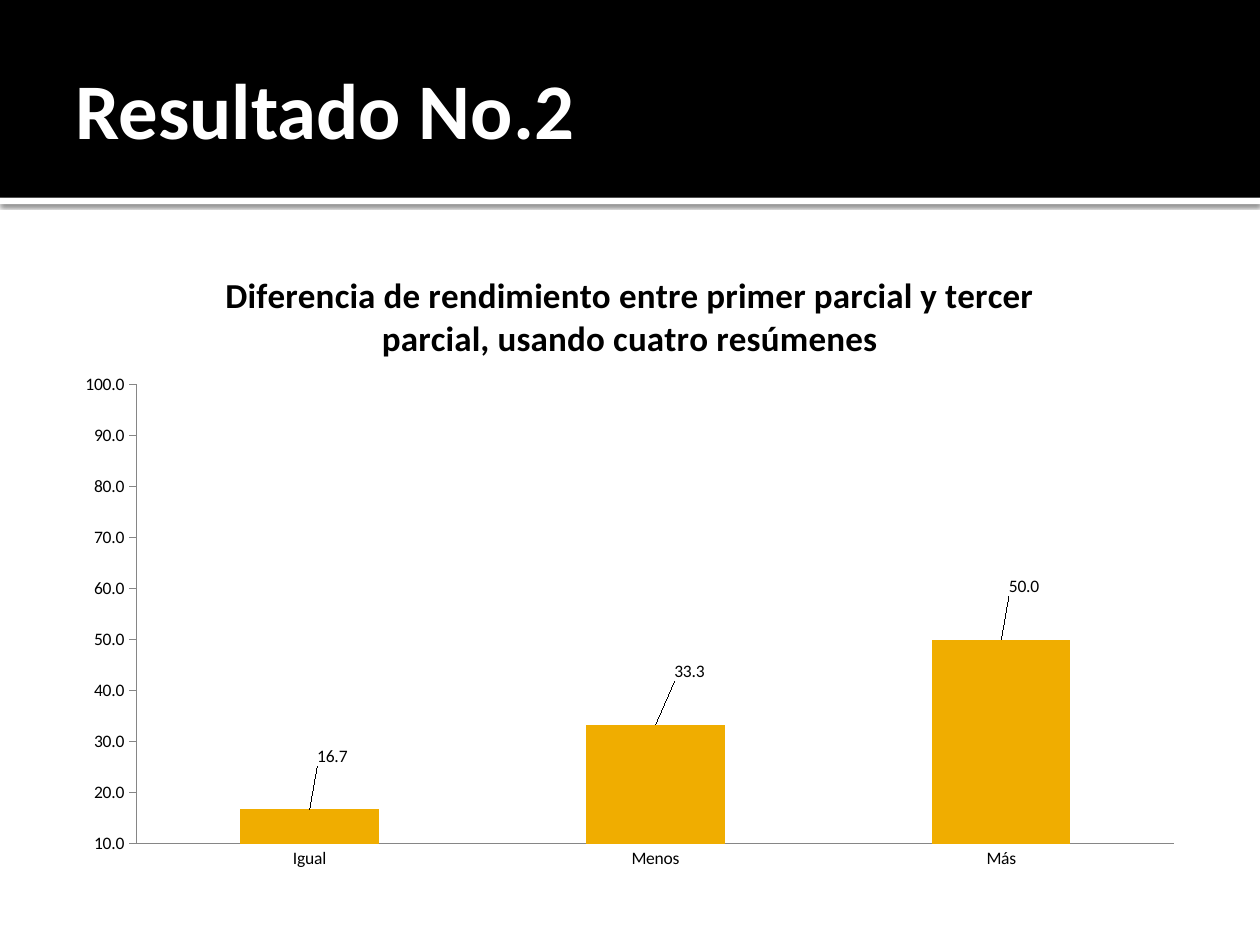
from lxml import etree
from pptx import Presentation
from pptx import util as u
from pptx.chart.data import CategoryChartData
from pptx.dml.color import RGBColor
from pptx.enum import chart as ch, shapes, text
from pptx.oxml import parse_xml
from pptx.oxml.ns import nsdecls, qn

HEADING = "Resultado No.2"
CHART_TITLE = "Diferencia de rendimiento entre primer parcial y tercer parcial, usando cuatro resúmenes"
RESULTS = {"Igual": 16.7, "Menos": 33.3, "Más": 50}
LABEL_SHIFTS = [(0.02, -0.06), (0.03, -0.06), (0.02, -0.06)]
BANDS = [("FFFFFF", 1.57, 0.05), ("000000", 0, 1.57)]
PLOT_AREA = {"layoutTarget": "inner", "xMode": "edge", "yMode": "edge",
             "x": 0.065, "y": 0.22, "w": 0.915, "h": 0.72}


def paint(color_format, hex_color):
    color_format.rgb = RGBColor.from_string(hex_color)


def apply(target, values):
    for key, value in values.items():
        setattr(target, key, value)


def style_font(font, size, bold, hex_color):
    apply(font, {"name": "Calibri", "size": u.Pt(size), "bold": bold})
    paint(font.color, hex_color)


def layout_xml(values):
    layout = parse_xml(f"<c:layout {nsdecls('c')}><c:manualLayout/></c:layout>")
    for key, value in values.items():
        etree.SubElement(layout[0], qn(f"c:{key}")).set("val", str(value))
    return layout


deck = Presentation()
apply(deck, {"slide_width": u.Inches(10), "slide_height": u.Inches(7.5)})
slide = deck.slides.add_slide(deck.slide_layouts[5])

bands = []
for hex_color, top, height in BANDS:
    band = slide.shapes.add_shape(shapes.MSO_SHAPE.RECTANGLE, 0, u.Inches(top),
                                  u.Inches(10), u.Inches(height))
    band.shadow.inherit = False
    band.fill.solid()
    paint(band.fill.fore_color, hex_color)
    band.line.fill.background()
    bands.append(band)

effects = bands[0].element.spPr.find(qn("a:effectLst"))
effects.append(parse_xml(
    f'<a:outerShdw {nsdecls("a")} blurRad="{u.Pt(2.5)}" dist="{u.Pt(0.8)}" dir="5400000">'
    '<a:srgbClr val="000000"><a:alpha val="60000"/></a:srgbClr></a:outerShdw>'))

heading = slide.shapes.title
heading.element.getparent().append(heading.element)
apply(heading, {"left": u.Inches(0.5), "top": u.Inches(0.17),
                "width": u.Inches(9), "height": u.Inches(1.37)})
frame = heading.text_frame
frame.text = HEADING
apply(frame, {"vertical_anchor": text.MSO_ANCHOR.MIDDLE, "word_wrap": True,
              "margin_left": u.Inches(0.1), "margin_right": u.Inches(0.05),
              "margin_top": u.Inches(0.05), "margin_bottom": u.Inches(0.05)})
frame.paragraphs[0].alignment = text.PP_ALIGN.LEFT
style_font(frame.paragraphs[0].runs[0].font, 45, True, "FFFFFF")

results = CategoryChartData(number_format="0.0")
results.categories = list(RESULTS)
results.add_series("Series 1", list(RESULTS.values()))
chart = slide.shapes.add_chart(ch.XL_CHART_TYPE.COLUMN_CLUSTERED, u.Inches(0.5),
                               u.Inches(1.94), u.Inches(9), u.Inches(5.06), results).chart
style_font(chart.font, 10, False, "000000")
apply(chart, {"has_legend": False, "has_title": True})
chart.chart_title.text_frame.text = CHART_TITLE
style_font(chart.chart_title.text_frame.paragraphs[0].runs[0].font, 20, True, "000000")
chart.chart_title.include_in_layout = False

plot_area = chart.element.chart.plotArea
for automatic in plot_area.findall(qn("c:layout")):
    plot_area.remove(automatic)
plot_area.insert(0, layout_xml(PLOT_AREA))

apply(chart.category_axis, {"major_tick_mark": ch.XL_TICK_MARK.NONE})
apply(chart.value_axis, {"major_tick_mark": ch.XL_TICK_MARK.OUTSIDE,
                         "minimum_scale": 10, "maximum_scale": 100, "major_unit": 10,
                         "has_major_gridlines": False})
apply(chart.value_axis.tick_labels, {"number_format": "0.0", "number_format_is_linked": False})
for axis in (chart.category_axis, chart.value_axis):
    paint(axis.format.line.color, "868686")
    axis.format.line.width = u.Pt(0.75)

plot = chart.plots[0]
apply(plot, {"gap_width": 150, "vary_by_categories": False})
series = plot.series[0]
series.format.fill.solid()
paint(series.format.fill.fore_color, "F0AD00")
apply(series.data_labels, {"show_value": True, "number_format": "0.0",
                           "number_format_is_linked": False})
for index, (x, y) in enumerate(LABEL_SHIFTS):
    series.points[index].data_label.position = ch.XL_LABEL_POSITION.OUTSIDE_END
for label, (x, y) in zip(series.data_labels._element.findall(qn("c:dLbl")), LABEL_SHIFTS):
    label.insert(1, layout_xml({"x": x, "y": y}))

deck.save("out.pptx")
